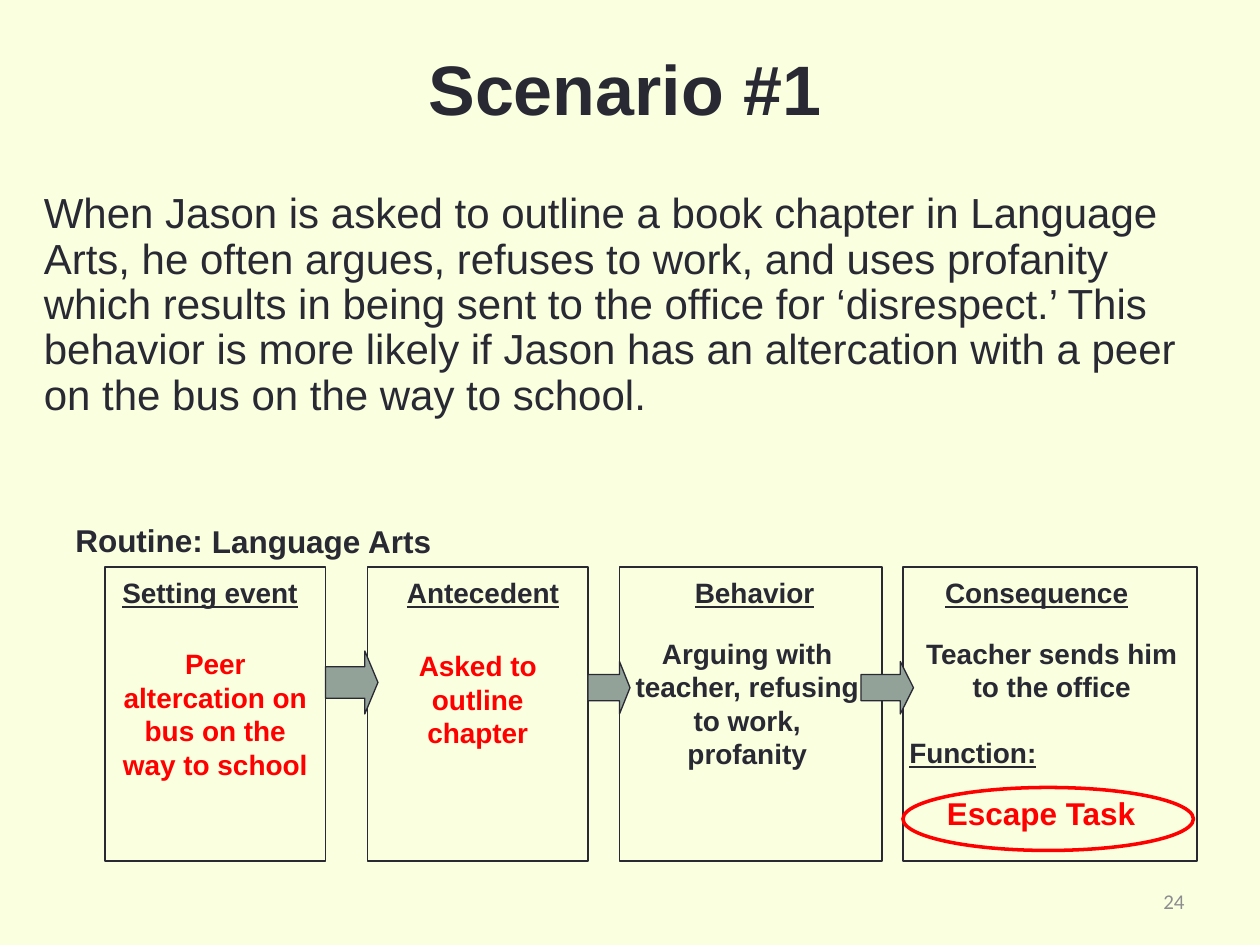
"""Build the Scenario #1 slide with its four-step behavior pathway."""
from dataclasses import dataclass

import pptx
import pptx.dml.color
import pptx.enum.shapes
import pptx.enum.text
import pptx.util

Pt = pptx.util.Pt
Kind = pptx.enum.shapes.MSO_SHAPE
Align = pptx.enum.text.PP_ALIGN
Anchor = pptx.enum.text.MSO_ANCHOR

COLORS = {
    "background": "FAFFE0",
    "ink": "292934",
    "answer": "FF0000",
    "arrow": "93A299",
    "number": "8D8D8F",
}
STEP_TOP, STEP_HEIGHT = 324, 168
HEADING_TOP = 325.5


@dataclass(frozen=True)
class Outline:
    kind: Kind
    left: float
    top: float
    width: float
    height: float
    fill: str = ""
    line: str = "ink"
    weight: float = 0.75


@dataclass(frozen=True)
class Label:
    lines: tuple[str, ...]
    left: float
    top: float
    width: float
    height: float
    size: float = 16
    color: str = "ink"
    align: Align = Align.CENTER
    bold: bool = True
    underline: bool = False
    font: str = "Arial"
    spacing: float = 1.0
    anchor: Anchor = Anchor.TOP


STEPS = [
    Outline(Kind.RECTANGLE, left, STEP_TOP, width, STEP_HEIGHT)
    for left, width in ((60, 126), (210, 126), (354, 150), (516, 168))
]
ARROWS = [
    Outline(Kind.RIGHT_ARROW, left, top, width, height, fill="arrow")
    for left, top, width, height in (
        (186, 372, 30, 36),
        (336, 378, 24, 30),
        (492, 378, 30, 30),
    )
]
FUNCTION_RING = Outline(Kind.OVAL, 516, 450, 166, 36, line="answer", weight=2)

HEADINGS = [
    Label((text,), left, HEADING_TOP, width, 26.5, align=align, underline=True)
    for text, left, width, align in (
        ("Setting event", 50, 140, Align.CENTER),
        ("Antecedent", 206, 140, Align.CENTER),
        ("Behavior", 390, 114, Align.LEFT),
        ("Consequence", 533, 119, Align.LEFT),
    )
]
SCENARIO = (
    "When Jason is asked to outline a book chapter in Language Arts, he often "
    "argues, refuses to work, and uses profanity which results in being sent to "
    "the office for ‘disrespect.’ This behavior is more likely if Jason has an "
    "altercation with a peer on the bus on the way to school."
)
LABELS = [
    Label(("Scenario #1",), 12, 28, 690, 50, size=40, spacing=0.9),
    Label((SCENARIO,), 18, 106.5, 690, 135, size=24, align=Align.LEFT, bold=False, spacing=0.9),
    Label(("Routine:",), 36, 294, 246, 29, size=18, align=Align.LEFT),
    Label(("Language Arts",), 114, 295, 240, 29, size=18, align=Align.LEFT),
    *HEADINGS,
    Label(("Peer altercation on bus on the way to school",), 60, 366, 126, 84, color="answer"),
    Label(("Asked to outline chapter",), 222, 367, 102, 65, color="answer"),
    Label(("Arguing with teacher, refusing to work, profanity",), 355, 360, 144, 84),
    Label(("Teacher sends him", "to the office"), 511, 360, 180, 46),
    Label(("Function:",), 512.5, 417, 120, 26.5, align=Align.LEFT, underline=True),
    Label(("Escape Task",), 534, 450, 130, 29, size=18, color="answer", align=Align.LEFT),
    Label(("24",), 516, 500.5, 168, 29, size=12, color="number", align=Align.RIGHT,
          bold=False, font="Calibri", anchor=Anchor.MIDDLE),
]


def rgb(name: str) -> pptx.dml.color.RGBColor:
    """Return the named palette color."""
    return pptx.dml.color.RGBColor.from_string(COLORS[name])


def draw_outline(page: pptx.slide.Slide, item: Outline) -> None:
    """Draw one step box, arrow or ring."""
    shape = page.shapes.add_shape(
        item.kind, Pt(item.left), Pt(item.top), Pt(item.width), Pt(item.height)
    )
    shape.shadow.inherit = False
    shape.line.color.rgb = rgb(item.line)
    shape.line.width = Pt(item.weight)
    if item.fill:
        shape.fill.solid()
        shape.fill.fore_color.rgb = rgb(item.fill)
    else:
        shape.fill.background()
    if item.kind == Kind.RIGHT_ARROW:
        shape.adjustments[0] = 0.5
        shape.adjustments[1] = 0.25


def draw_label(page: pptx.slide.Slide, item: Label) -> None:
    """Draw one text box with a paragraph per line."""
    box = page.shapes.add_textbox(
        Pt(item.left), Pt(item.top), Pt(item.width), Pt(item.height)
    )
    frame = box.text_frame
    frame.word_wrap = True
    frame.vertical_anchor = item.anchor
    frame.text = "\n".join(item.lines)
    for para in frame.paragraphs:
        para.alignment = item.align
        para.line_spacing = item.spacing
        para.font.name = item.font
        para.font.size = Pt(item.size)
        para.font.bold = item.bold
        para.font.underline = item.underline
        para.font.color.rgb = rgb(item.color)


def main() -> None:
    """Assemble and save the deck."""
    deck = pptx.Presentation()
    deck.slide_width, deck.slide_height = Pt(720), Pt(540)
    page = deck.slides.add_slide(deck.slide_layouts[6])
    page.background.fill.solid()
    page.background.fill.fore_color.rgb = rgb("background")
    for outline in (*STEPS, *ARROWS, FUNCTION_RING):
        draw_outline(page, outline)
    for label in LABELS:
        draw_label(page, label)
    deck.save("out.pptx")


if __name__ == "__main__":
    main()
